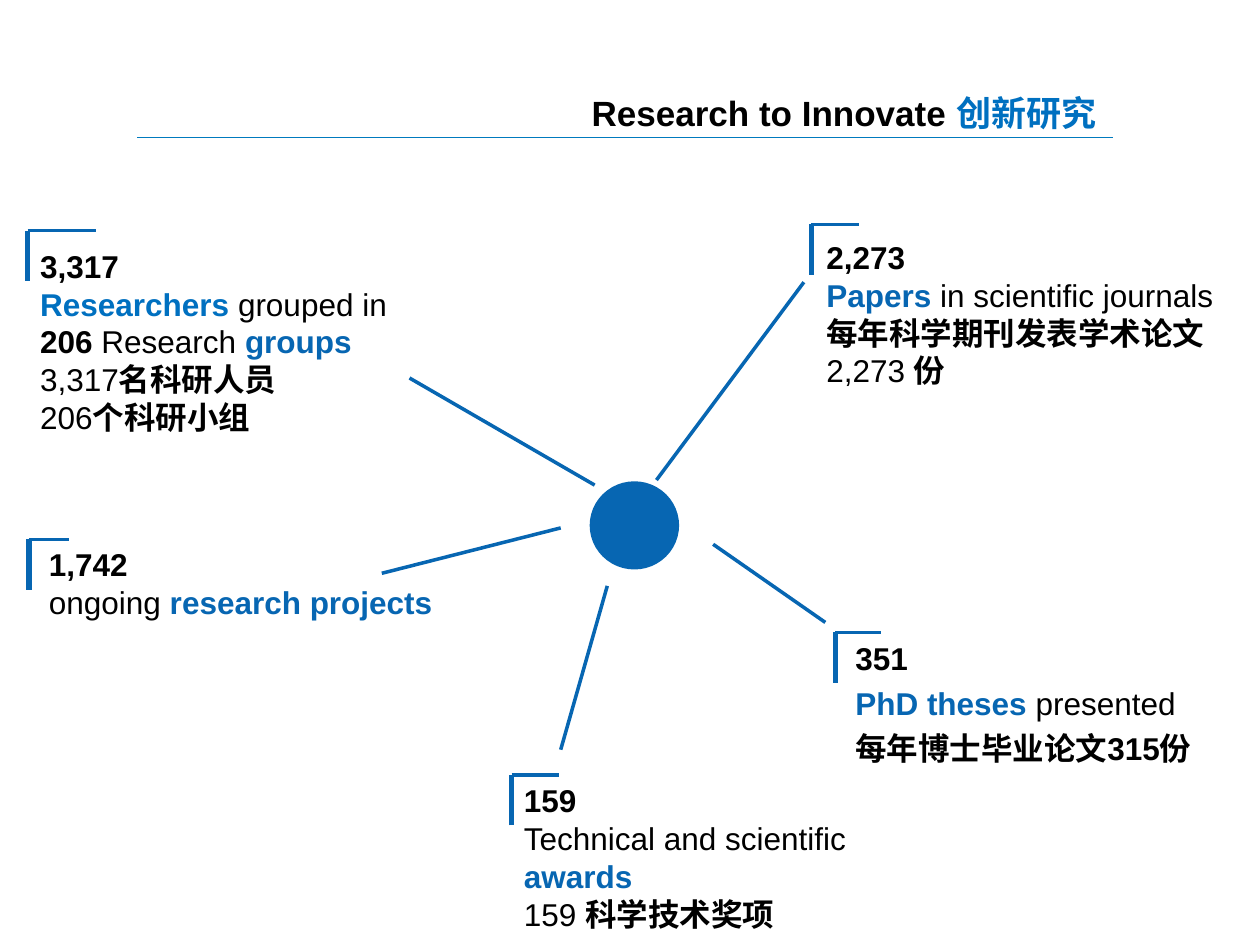
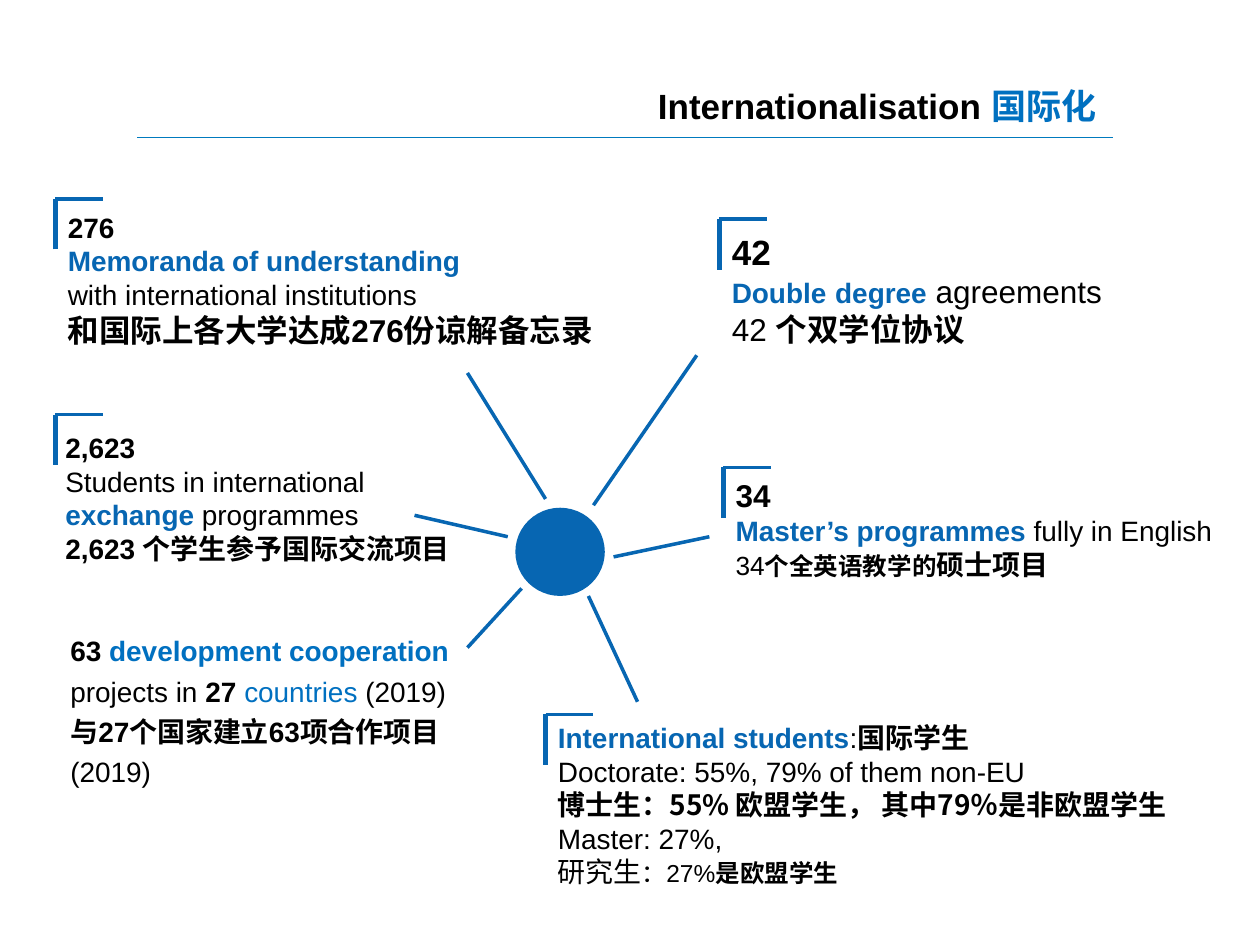
from dataclasses import dataclass
from typing import NamedTuple, Optional

from lxml import etree
from pptx import Presentation
from pptx import util as u
from pptx.dml.color import RGBColor
from pptx.enum import shapes, text
from pptx.oxml import ns

# Shared style
HUES = {"ink": "000000", "blue": "0766B2", "sky": "0070C0", "rule": "007ABE"}
LATIN, HAN = "Arial", "Noto Sans CJK SC"
DOT_W, DOT_H = 0.71, 0.7
TICK = 0.4


class Run(NamedTuple):
    text: str
    bold: bool = False
    hue: str = "ink"
    size: Optional[float] = None
    font: str = LATIN


class Para(NamedTuple):
    runs: list[Run]
    space: Optional[float] = None


class Bracket(NamedTuple):
    x: float
    y: float
    width: float = 0.38


class Ray(NamedTuple):
    x1: float
    y1: float
    x2: float
    y2: float


@dataclass
class Note:
    box: tuple[float, float, float, float]
    paras: list[Para]
    size: float = 18
    mark: Optional[Bracket] = None


@dataclass
class Page:
    title: tuple[str, str]
    head: tuple[float, float]  # top and height of the title box
    dot: tuple[float, float]
    rays: list[Ray]
    notes: list[Note]


def bold(words: str, hue: str = "ink", size: Optional[float] = None,
         font: str = LATIN) -> Run:
    return Run(words, True, hue, size, font)


def row(*runs: Run, space: Optional[float] = None) -> Para:
    return Para(list(runs), space)


# Drawing
def tint(name: str) -> RGBColor:
    return RGBColor.from_string(HUES[name])


def draw_line(slide, ray: Ray, width: float = 2, hue: str = "blue") -> None:
    line = slide.shapes.add_connector(
        shapes.MSO_CONNECTOR.STRAIGHT, *(u.Inches(v) for v in ray))
    line.line.width = u.Pt(width)
    line.line.color.rgb = tint(hue)
    etree.SubElement(line._element.spPr, ns.qn("a:effectLst"))


def draw_mark(slide, mark: Bracket) -> None:
    x, y, width = mark
    draw_line(slide, Ray(x, y, x + width, y))
    draw_line(slide, Ray(x, y + TICK, x, y), 3)


def draw_run(para, run: Run, size: float) -> None:
    piece = para.add_run()
    piece.text = run.text
    form = {"size": u.Pt(run.size or size), "bold": run.bold, "name": run.font}
    for key, value in form.items():
        setattr(piece.font, key, value)
    piece.font.color.rgb = tint(run.hue)
    han = etree.SubElement(piece.font._element, ns.qn("a:ea"))
    han.set("typeface", HAN)


def draw_text(slide, note: Note, align=text.PP_ALIGN.LEFT) -> None:
    frame = slide.shapes.add_textbox(
        *(u.Inches(v) for v in note.box)).text_frame
    frame.word_wrap = True
    for i, item in enumerate(note.paras):
        para = frame.add_paragraph() if i else frame.paragraphs[0]
        para.alignment = align
        if item.space:
            para.line_spacing = item.space
        for run in item.runs:
            if run.text == "\n":
                para.add_line_break()
            else:
                draw_run(para, run, note.size)


def draw_dot(slide, x: float, y: float) -> None:
    dot = slide.shapes.add_shape(
        shapes.MSO_SHAPE.OVAL, *(u.Inches(v) for v in (x, y, DOT_W, DOT_H)))
    dot.shadow.inherit = False
    dot.fill.solid()
    dot.fill.fore_color.rgb = tint("blue")
    dot.line.fill.background()


def draw_page(deck, page: Page) -> None:
    slide = deck.slides.add_slide(deck.slide_layouts[6])
    draw_line(slide, Ray(1.09, 1.09, 8.83, 1.09), 0.75, "rule")
    top, height = page.head
    name, han = page.title
    title = row(bold(name + " "), bold(han, "sky"))
    draw_text(slide, Note((3.4, top, 5.4, height), [title], 20),
              text.PP_ALIGN.RIGHT)
    draw_dot(slide, *page.dot)
    for ray in page.rays:
        draw_line(slide, ray)
    for note in page.notes:
        if note.mark:
            draw_mark(slide, note.mark)
        draw_text(slide, note)


# Research slide
RESEARCH = Page(
    ("Research to Innovate", "创新研究"), (0.68, 0.68), (4.68, 3.82),
    [Ray(3.25, 3, 4.72, 3.85), Ray(5.21, 3.81, 6.38, 2.24),
     Ray(4.82, 4.65, 4.45, 5.95), Ray(5.66, 4.32, 6.55, 4.94),
     Ray(3.03, 4.55, 4.45, 4.19)],
    [
        Note((6.69, 5.02, 2.91, 1.49), [
            row(bold("351")),
            row(bold("PhD theses ", "blue"), Run("presented"), space=1.2),
            row(bold("每年博士毕业论文315份"), space=1.2),
        ], mark=Bracket(6.63, 5.02, 0.36)),
        Note((6.46, 1.84, 3.32, 1.62), [
            row(bold("2,273")),
            row(bold("Papers", "blue"), Run(" in scientific journals")),
            row(bold("每年科学期刊发表学术论文"), Run("2,273 "), bold("份")),
        ], mark=Bracket(6.44, 1.78)),
        Note((4.06, 6.15, 3.19, 1.92), [
            row(bold("159")),
            row(Run("Technical and scientific "), bold("awards", "blue")),
            row(Run("159 "), bold("科学技术奖项")),
        ], mark=Bracket(4.06, 6.15)),
        Note((0.22, 1.91, 3.05, 2.22), [
            row(bold("3,317")),
            row(bold("Researchers ", "sky"), Run("grouped in")),
            row(bold("206 "), Run("Research "), bold("groups", "blue")),
            row(Run("3,317"), bold("名科研人员")),
            row(Run("206"), bold("个科研小组")),
        ], mark=Bracket(0.22, 1.83, 0.54)),
        Note((0.29, 4.28, 3.36, 0.71), [
            row(bold("1,742")),
            row(Run("ongoing"), bold(" research projects", "blue")),
        ], mark=Bracket(0.23, 4.28, 0.32)),
    ])

# International slide
GLOBAL = Page(
    ("Internationalisation", "国际化"), (0.62, 0.49), (4.09, 4.03),
    [Ray(3.71, 2.96, 4.33, 3.96), Ray(4.71, 4.01, 5.53, 2.82),
     Ray(4.87, 4.42, 5.63, 4.26), Ray(3.29, 4.09, 4.03, 4.26),
     Ray(5.06, 5.57, 4.67, 4.73), Ray(3.71, 5.14, 4.14, 4.67)],
    [
        Note((0.44, 1.62, 4.42, 1.82), [
            row(bold("276")),
            row(bold("Memoranda of understanding", "blue")),
            row(Run("with international institutions")),
            row(bold("和国际上各大学达成276份谅解备忘录", size=18)),
        ], 16, Bracket(0.44, 1.58)),
        Note((5.71, 1.78, 4.25, 1.35), [
            row(bold("42", size=20)),
            row(bold("Double", "blue", 16), bold(" ", "blue"),
                bold("degree", "blue", 16), bold(" ", "blue"),
                Run("agreements")),
            row(Run("42 "), bold("个双学位协议")),
        ], 18, Bracket(5.71, 1.74)),
        Note((5.74, 3.73, 5.04, 1.18), [
            row(bold("34", size=18)),
            row(bold("Master’s programmes", "blue"), Run(" fully in English")),
            row(Run("34", size=15), bold("个全英语教学的", size=14),
                bold("硕士项目")),
        ], 16, Bracket(5.74, 3.71)),
        Note((0.42, 3.37, 3.41, 1.18), [
            row(bold("2,623")),
            row(Run("Students in international "), bold("exchange ", "blue"),
                Run("programmes")),
            row(bold("2,623 个学生参予国际交流项目")),
        ], 16, Bracket(0.44, 3.29)),
        Note((4.33, 5.67, 6.32, 1.45), [
            row(bold("International students", "blue"), Run(":"),
                bold("国际学生"), Run("\n"),
                Run("Doctorate: 55%, 79% of them non-EU")),
            row(bold("博士生：55% 欧盟学生， 其中79％是非欧盟学生", font=HAN)),
            row(Run("Master: 27%,")),
            row(Run("研究生"), Run("：27%", size=14),
                bold("是欧盟学生", size=14)),
        ], 16, Bracket(4.33, 5.67)),
        Note((0.46, 4.93, 3.25, 1.36), [
            row(bold("63 "), bold("development cooperation ", "sky"),
                Run("projects in "), bold("27 "), Run("countries ", hue="sky"),
                Run("(2019)"), space=1.2),
            row(bold("与27个国家建立63项合作项目"), space=1.2),
            row(Run("(2019)"), space=1.2),
        ], 16),
    ])


def main() -> None:
    deck = Presentation()
    deck.slide_width, deck.slide_height = u.Inches(10), u.Inches(7.5)
    for page in (RESEARCH, GLOBAL):
        draw_page(deck, page)
    deck.save("out.pptx")


if __name__ == "__main__":
    main()
